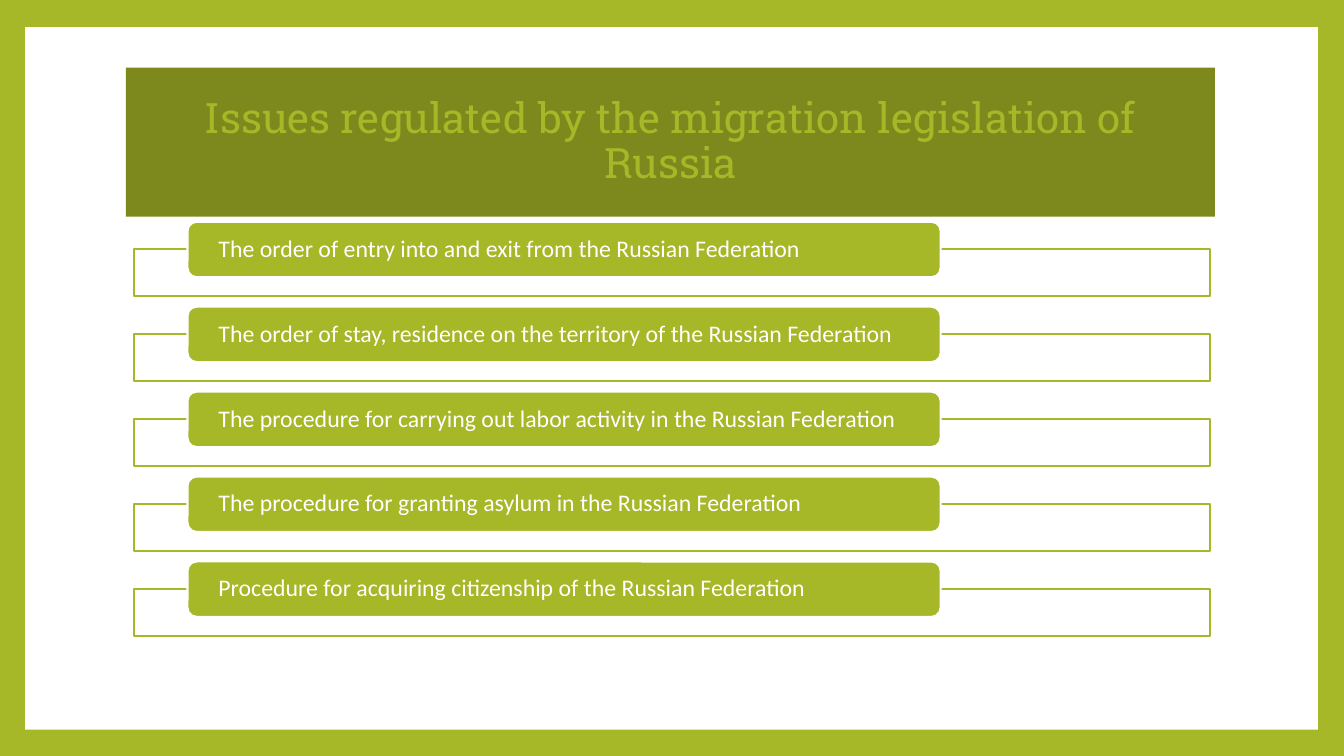
from dataclasses import dataclass

from lxml import etree
from pptx import Presentation
from pptx.dml.color import RGBColor
from pptx.enum.shapes import MSO_SHAPE
from pptx.enum.text import MSO_ANCHOR, PP_ALIGN
from pptx.oxml.ns import qn
from pptx.util import Inches, Pt

RECT = MSO_SHAPE.RECTANGLE
ROUNDED = MSO_SHAPE.ROUNDED_RECTANGLE
MIDDLE = MSO_ANCHOR.MIDDLE
LEFT, CENTER = PP_ALIGN.LEFT, PP_ALIGN.CENTER


@dataclass(frozen=True)
class Theme:
    lime: str = "A6B727"
    olive: str = "7D891D"
    white: str = "FFFFFF"
    title_font: str = "Roboto Slab"
    body_font: str = "Calibri"
    title_size: float = 30
    body_size: float = 17
    line_width: float = 1.5


TITLE = "Issues regulated by the migration legislation of Russia"
ISSUES = [
    "The order of entry into and exit from the Russian Federation",
    "The order of stay, residence on the territory of the Russian Federation",
    "The procedure for carrying out labor activity in the Russian Federation",
    "The procedure for granting asylum in the Russian Federation",
    "Procedure for acquiring citizenship of the Russian Federation",
]

# List layout in inches: tops of the first and last frames set the pitch
FIRST_TOP, LAST_TOP = 2.47, 5.84
PITCH = (LAST_TOP - FIRST_TOP) / (len(ISSUES) - 1)
LABEL_RISE = 0.27


def write_text(shape, text, *, font, size, color, align=LEFT, inset=0.1, inset_y=0.05):
    frame = shape.text_frame
    frame.word_wrap = True
    frame.vertical_anchor = MIDDLE
    frame.margin_left = frame.margin_right = Inches(inset)
    frame.margin_top = frame.margin_bottom = Inches(inset_y)
    paragraph = frame.paragraphs[0]
    paragraph.alignment = align
    paragraph.line_spacing = 0.9
    run = paragraph.add_run()
    run.text = text
    run.font.name = font
    run.font.size = Pt(size)
    run.font.color.rgb = RGBColor.from_string(color)


class SlideBuilder:
    def __init__(self, slide, theme):
        self.slide = slide
        self.theme = theme

    def background(self, color):
        fill = self.slide.background.fill
        fill.solid()
        fill.fore_color.rgb = RGBColor.from_string(color)

    def box(self, left, top, width, height, fill, *, kind=RECT, line=None, opacity=100):
        shape = self.slide.shapes.add_shape(
            kind, Inches(left), Inches(top), Inches(width), Inches(height))
        shape.shadow.inherit = False
        shape.fill.solid()
        shape.fill.fore_color.rgb = RGBColor.from_string(fill)
        if opacity < 100:
            color = shape.fill._xPr.find(f"{qn('a:solidFill')}/{qn('a:srgbClr')}")
            etree.SubElement(color, qn("a:alpha")).set("val", str(opacity * 1000))
        if line:
            shape.line.color.rgb = RGBColor.from_string(line)
            shape.line.width = Pt(self.theme.line_width)
        else:
            shape.line.fill.background()
        return shape

    def title(self, text):
        theme = self.theme
        banner = self.box(1.25, 0.67, 10.8, 1.48, theme.olive)
        write_text(banner, text, font=theme.title_font, size=theme.title_size,
                   color=theme.lime, align=CENTER)

    def issue(self, text, top):
        theme = self.theme
        self.box(1.33, top, 10.67, 0.47, theme.white, line=theme.lime, opacity=90)
        label = self.box(1.86, top - LABEL_RISE, 7.47, 0.55, theme.lime,
                         kind=ROUNDED, line=theme.white)
        write_text(label, text, font=theme.body_font, size=theme.body_size,
                   color=theme.white, inset=0.28, inset_y=0)


def main():
    deck = Presentation()
    deck.slide_width, deck.slide_height = Inches(13.33), Inches(7.5)
    theme = Theme()
    builder = SlideBuilder(deck.slides.add_slide(deck.slide_layouts[6]), theme)

    # Lime border around a white page
    builder.background(theme.lime)
    builder.box(0.25, 0.27, 12.82, 6.97, theme.white)

    # Title banner
    builder.title(TITLE)

    # Issues, each a label over an outlined frame
    for row, issue in enumerate(ISSUES):
        builder.issue(issue, FIRST_TOP + row * PITCH)

    deck.save("out.pptx")


if __name__ == "__main__":
    main()
